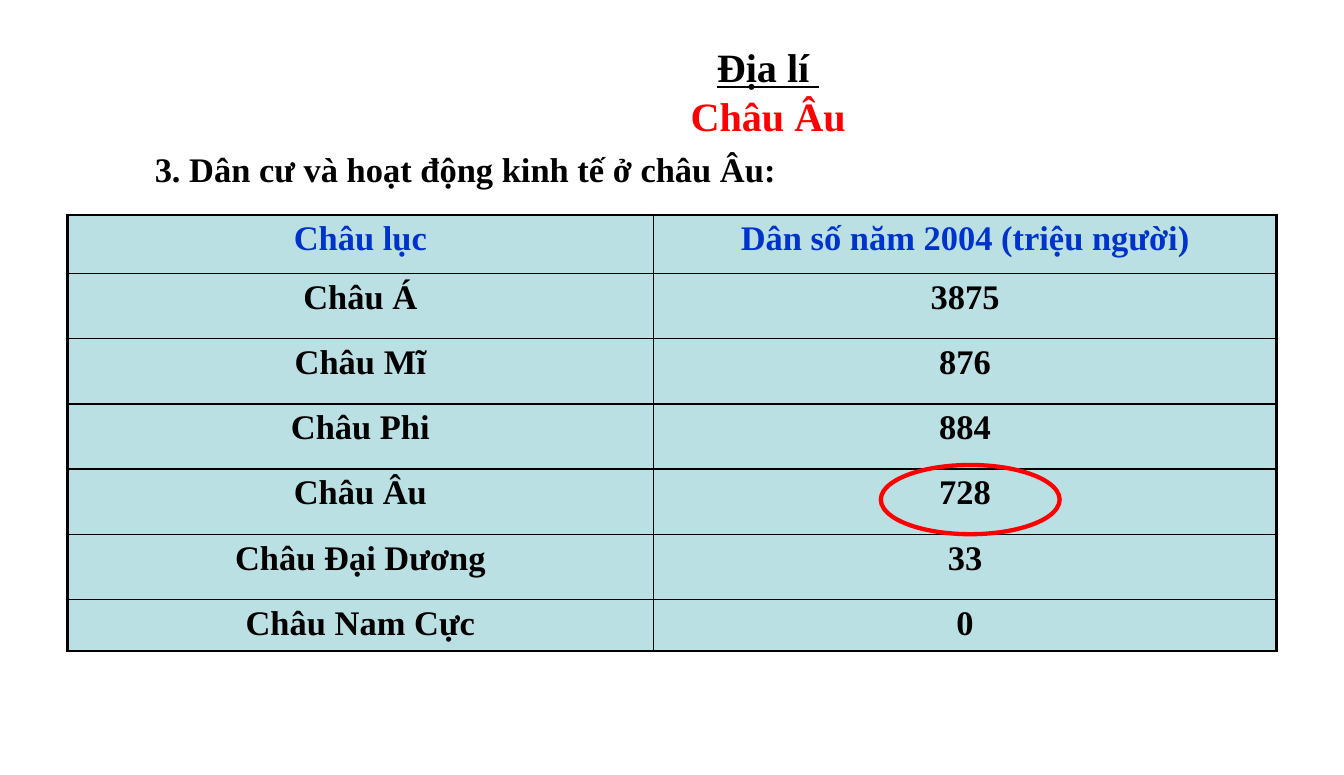
from lxml.etree import SubElement
from pptx import Presentation
from pptx.dml.color import RGBColor
from pptx.enum.shapes import MSO_SHAPE
from pptx.enum.text import MSO_ANCHOR, PP_ALIGN
from pptx.oxml.ns import qn
from pptx.util import Inches, Pt


def style(para, size, color):
    """Centre a paragraph and set its bold font."""
    para.alignment = PP_ALIGN.CENTER
    font = para.font
    font.name, font.size, font.bold = "Times New Roman", Pt(size), True
    font.color.rgb = RGBColor.from_string(color)


def border(cell, side, width):
    """Draw a black border on one side (L, R, T or B) of a cell."""
    line = SubElement(cell._tc.get_or_add_tcPr(), qn(f"a:ln{side}"), w=str(Pt(width)))
    fill = SubElement(line, qn("a:solidFill"))
    SubElement(fill, qn("a:srgbClr"), val="000000")


prs = Presentation()
prs.slide_width, prs.slide_height = Inches(13), Inches(7.5)
slide = prs.slides.add_slide(prs.slide_layouts[6])
shapes = slide.shapes

# Population table
rows = [
    ("Châu lục", "Dân số năm 2004 (triệu người)"),
    ("Châu Á", "3875"),
    ("Châu Mĩ", "876"),
    ("Châu Phi", "884"),
    ("Châu Âu", "728"),
    ("Châu Đại Dương", "33"),
    ("Châu Nam Cực", "0"),
]
widths = [5.67, 6.03]
heights = [0.57] + [0.63] * 5 + [0.5]
last = len(rows) - 1
table = shapes.add_table(len(rows), 2, Inches(0.65), Inches(2.08),
                         Inches(sum(widths)), Inches(sum(heights))).table
for col, width in zip(table.columns, widths):
    col.width = Inches(width)
for r, texts in enumerate(rows):
    table.rows[r].height = Inches(heights[r])
    for c, text in enumerate(texts):
        cell = table.cell(r, c)
        cell.margin_left = cell.margin_right = Inches(0.13)
        cell.margin_top = cell.margin_bottom = Inches(0.05)
        cell.text = text
        style(cell.text_frame.paragraphs[0], 24, "000000" if r else "0033CC")
        outer = {"L": c == 0, "R": c == 1, "T": r == 0, "B": r == last}
        for side, edge in outer.items():
            border(cell, side, 2.25 if edge else 1)
        cell.fill.solid()
        cell.fill.fore_color.rgb = RGBColor.from_string("BBE0E3")

# Ring around the population of Europe
ring = shapes.add_shape(MSO_SHAPE.OVAL, Inches(8.52), Inches(4.5), Inches(1.73), Inches(0.67))
ring.shadow.inherit = False
ring.fill.background()
ring.line.color.rgb = RGBColor.from_string("FF0000")
ring.line.width = Pt(3)

# Section heading and lesson title
heads = [
    ((-0.44, 1.17, 9.88, 0.92), 24,
     [("3. Dân cư và hoạt động kinh tế ở châu Âu:", "000000", False)]),
    ((1.58, 0.17, 11.7, 1.42), 28,
     [("Địa lí ", "000000", True), ("Châu Âu", "FF0000", False)]),
]
for place, size, lines in heads:
    frame = shapes.add_textbox(*map(Inches, place)).text_frame
    frame.word_wrap = True
    frame.vertical_anchor = MSO_ANCHOR.MIDDLE
    frame.text = "\n".join(text for text, _, _ in lines)
    for para, (_, color, under) in zip(frame.paragraphs, lines):
        style(para, size, color)
        para.font.underline = under

prs.save("out.pptx")
